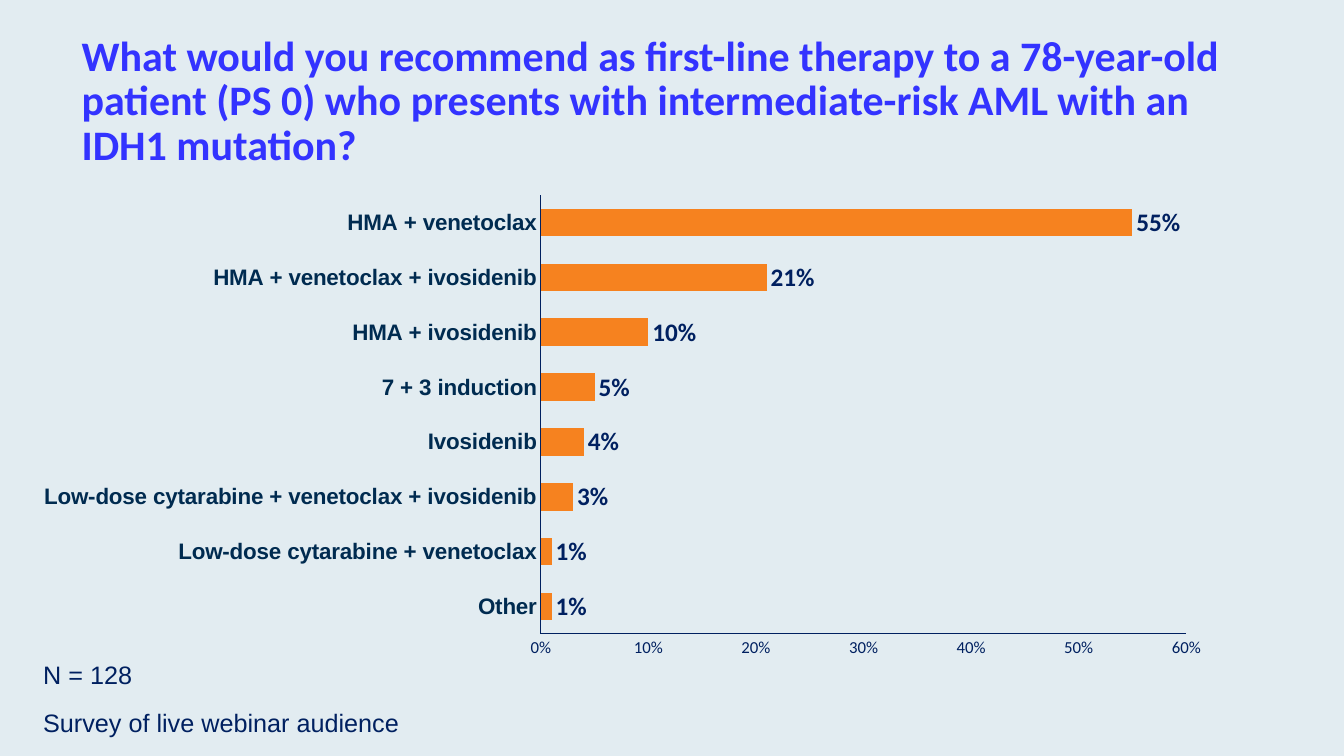
from lxml import etree
from pptx import Presentation
from pptx.chart.data import CategoryChartData
from pptx.dml.color import RGBColor
from pptx.enum.chart import XL_CHART_TYPE as ChartType, XL_LABEL_POSITION as LabelPosition
from pptx.enum.chart import XL_TICK_MARK as TickMark
from pptx.enum.text import MSO_ANCHOR as Anchor, MSO_AUTO_SIZE as AutoSize
from pptx.oxml.ns import qn
from pptx.util import Emu, Pt

TITLE = [
    "What would you recommend as first-line therapy to a 78-year-old patient (PS 0) "
    "who presents with intermediate-risk AML with an ",
    "IDH1 mutation?",
]
RESPONSES = [
    ("HMA + venetoclax", 0.55),
    ("HMA + venetoclax + ivosidenib", 0.21),
    ("HMA + ivosidenib", 0.10),
    ("7 + 3 induction", 0.05),
    ("Ivosidenib", 0.04),
    ("Low-dose cytarabine + venetoclax + ivosidenib", 0.03),
    ("Low-dose cytarabine + venetoclax", 0.01),
    ("Other", 0.01),
]
NOTES = [
    ("N = 128", (33, 649, 109, 40)),
    ("Survey of live webinar audience", (33, 697, 376, 40)),
]
TITLE_BOX = (81, 39, 1200, 125)
CHART_BOX = (17, 179, 1208, 489)
PLOT = {"x": 0.43, "y": 0.03, "w": 0.53, "h": 0.89}

NAVY, BLUE, ORANGE = "002060", "3333FF", "F6821F"
LABEL_NAVY, PALE = "002B50", "E2ECF1"
PX = 9144


def px(*lengths):
    return [Emu(length * PX) for length in lengths]


def color(value):
    return RGBColor.from_string(value)


def set_font(font, name, size, value, bold=False):
    font.name = name
    font.size = Pt(size)
    font.bold = bold
    font.color.rgb = color(value)


def add_text(slide, text, box, name, size, value, bold=False):
    frame = slide.shapes.add_textbox(*px(*box)).text_frame
    frame.text = text
    for run in frame.paragraphs[0].runs:
        set_font(run.font, name, size, value, bold)
    return frame


def add_title(slide):
    frame = add_text(slide, "\v".join(TITLE), TITLE_BOX, "Calibri", 30, BLUE, True)
    frame.word_wrap = True
    frame.vertical_anchor = Anchor.MIDDLE
    frame.margin_left = frame.margin_right = frame.margin_top = frame.margin_bottom = 0
    frame.paragraphs[0].line_spacing = 0.88


def style_axis(axis, name, size, value, bold=False):
    axis.has_major_gridlines = False
    axis.major_tick_mark = axis.minor_tick_mark = TickMark.NONE
    axis.format.line.color.rgb = color(NAVY)
    axis.format.line.width = Pt(0.75)
    set_font(axis.tick_labels.font, name, size, value, bold)


def place_plot(chart):
    plot_area = chart.plots[0]._element.getparent()
    for old in plot_area.findall(qn("c:layout")):
        plot_area.remove(old)
    layout = etree.Element(qn("c:layout"))
    plot_area.insert(0, layout)
    manual = etree.SubElement(layout, qn("c:manualLayout"))
    settings = {"layoutTarget": "inner", "xMode": "edge", "yMode": "edge", **PLOT}
    for tag, setting in settings.items():
        etree.SubElement(manual, qn(f"c:{tag}")).set("val", str(setting))


def add_response_chart(slide):
    data = CategoryChartData(number_format="0%")
    data.categories = [answer for answer, share in reversed(RESPONSES)]
    data.add_series("Series 1", [share for answer, share in reversed(RESPONSES)])
    chart = slide.shapes.add_chart(ChartType.BAR_CLUSTERED, *px(*CHART_BOX), data).chart
    chart.has_legend = chart.has_title = False
    set_font(chart.font, "Calibri", 10, "000000")

    style_axis(chart.category_axis, "Arial", 16, LABEL_NAVY, True)
    value_axis = chart.value_axis
    style_axis(value_axis, "Calibri", 12, NAVY)
    value_axis.minimum_scale, value_axis.maximum_scale, value_axis.major_unit = 0, 0.6, 0.1
    value_axis.tick_labels.number_format = "0%"
    value_axis.tick_labels.number_format_is_linked = False

    plot = chart.plots[0]
    plot.gap_width, plot.overlap = 98, -19
    plot.vary_by_categories = False
    series = plot.series[0]
    series.format.fill.solid()
    series.format.fill.fore_color.rgb = color(ORANGE)
    labels = series.data_labels
    labels.show_value = True
    labels.position = LabelPosition.OUTSIDE_END
    labels.number_format = "0%"
    labels.number_format_is_linked = False
    set_font(labels.font, "Calibri", 18, NAVY, True)
    place_plot(chart)


def main():
    presentation = Presentation()
    presentation.slide_width, presentation.slide_height = px(1333, 750)
    slide = presentation.slides.add_slide(presentation.slide_layouts[6])
    slide.background.fill.solid()
    slide.background.fill.fore_color.rgb = color(PALE)
    add_title(slide)
    add_response_chart(slide)
    for note, box in NOTES:
        frame = add_text(slide, note, box, "Arial", 18, NAVY)
        frame.word_wrap = False
        frame.auto_size = AutoSize.SHAPE_TO_FIT_TEXT
    presentation.save("out.pptx")


if __name__ == "__main__":
    main()
